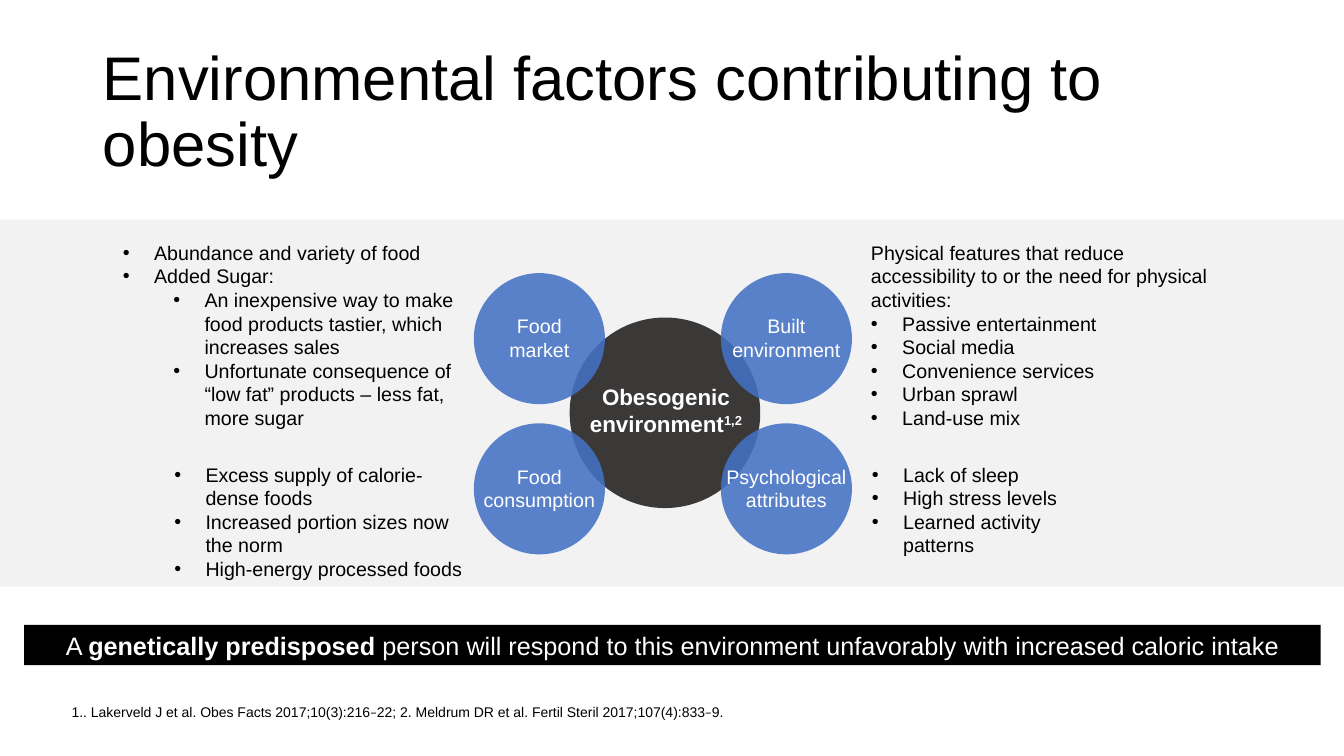
from lxml.etree import SubElement
from pptx import Presentation
from pptx.dml.color import RGBColor
from pptx.enum.shapes import MSO_SHAPE
from pptx.enum.text import MSO_ANCHOR, MSO_AUTO_SIZE, PP_ALIGN
from pptx.oxml.ns import qn
from pptx.util import Inches, Pt

BLACK = RGBColor(0x00, 0x00, 0x00)
WHITE = RGBColor(0xFF, 0xFF, 0xFF)
PALE_GREY = RGBColor(0xF2, 0xF2, 0xF2)
CHARCOAL = RGBColor(0x3B, 0x38, 0x38)
BLUE = RGBColor(0x44, 0x72, 0xC4)

CIRCLE_SIZE = 1.3
HANGING = 0.31
LEVEL_STEP = 0.5

# Label, circle left, circle top, label width
FACTORS = [
    ("Built environment", 7.15, 2.71, 1.3),
    ("Psychological attributes", 7.15, 4.2, 1.5),
    ("Food consumption", 4.7, 4.2, 1.5),
    ("Food market", 4.7, 2.71, 1.2),
]

# Box, then (text, bullet level); level None means no bullet
DETAILS = [
    ((8.54, 2.34, 3.68, 2.22), [
        ("Physical features that reduce accessibility to or the need "
         "for physical activities:", None),
        ("Passive entertainment", 0),
        ("Social media", 0),
        ("Convenience services", 0),
        ("Urban sprawl", 0),
        ("Land-use mix", 0),
    ]),
    ((1.63, 4.54, 3.09, 1.28), [
        ("Excess supply of calorie-dense foods", 0),
        ("Increased portion sizes now the norm", 0),
        ("High-energy processed foods", 0),
    ]),
    ((8.55, 4.54, 2.63, 0.81), [
        ("Lack of sleep", 0),
        ("High stress levels", 0),
        ("Learned activity patterns", 0),
    ]),
    ((1.12, 2.34, 3.49, 1.99), [
        ("Abundance and variety of food", 0),
        ("Added Sugar:", 0),
        ("An inexpensive way to make food products tastier, "
         "which increases sales", 1),
        ("Unfortunate consequence of “low fat” products – less fat, "
         "more sugar", 1),
    ]),
]


def style(paragraph, size, color, align=PP_ALIGN.LEFT):
    paragraph.alignment = align
    paragraph.font.name = "Arial"
    paragraph.font.size = Pt(size)
    paragraph.font.color.rgb = color


def add_panel(slide, kind, box, color, opacity=None):
    panel = slide.shapes.add_shape(kind, *map(Inches, box))
    panel.shadow.inherit = False
    panel.fill.solid()
    panel.fill.fore_color.rgb = color
    panel.line.fill.background()
    if opacity:
        tint = panel.fill._xPr.find(qn("a:solidFill"))[0]
        SubElement(tint, qn("a:alpha"), val=str(opacity * 1000))
    return panel


def add_text(slide, box):
    frame = slide.shapes.add_textbox(*map(Inches, box)).text_frame
    frame.word_wrap = True
    return frame


def add_bullet(paragraph, level):
    paragraph.level = level
    properties = paragraph._p.get_or_add_pPr()
    properties.set("marL", str(Inches(HANGING + LEVEL_STEP * level)))
    properties.set("indent", str(Inches(-HANGING)))
    SubElement(properties, qn("a:buFont"), typeface="Arial")
    SubElement(properties, qn("a:buChar"), char="•")


def add_title(slide, text):
    title = slide.shapes.title
    title.left, title.top = Inches(0.92), Inches(0.4)
    title.width, title.height = Inches(11.5), Inches(1.45)
    frame = title.text_frame
    frame.text = text
    frame.word_wrap = True
    frame.auto_size = MSO_AUTO_SIZE.NONE
    frame.vertical_anchor = MSO_ANCHOR.MIDDLE
    style(frame.paragraphs[0], 44, BLACK)
    frame.paragraphs[0].line_spacing = 0.9


def add_references(slide):
    frame = add_text(slide, (0.71, 6.8, 11.8, 0.35))
    frame.margin_left = frame.margin_right = 0
    frame.margin_top = frame.margin_bottom = 0
    frame.vertical_anchor = MSO_ANCHOR.BOTTOM
    references = frame.paragraphs[0]
    style(references, 10, BLACK)
    references.line_spacing = 0.9
    pieces = ["1.. Lakerveld J et al. Obes Facts 2017;10(3):216", "–",
              "22; 2. Meldrum DR et al. Fertil Steril 2017;107(4):833", "–",
              "9."]
    for piece in pieces:
        run = references.add_run()
        run.text = piece
        run.font.name = "Calibri" if piece == "–" else "Arial"


def add_core(slide):
    add_panel(slide, MSO_SHAPE.OVAL, (5.65, 3.15, 1.89, 1.89), CHARCOAL)
    core = add_text(slide, (5.4, 3.75, 2.41, 0.64)).paragraphs[0]
    style(core, 16, WHITE, PP_ALIGN.CENTER)
    core.font.bold = True
    core.add_run().text = "Obesogenic environment"
    citation = core.add_run()
    citation.text = "1,2"
    citation.font._element.set("baseline", "30000")


def add_factor(slide, label, left, top, label_width):
    add_panel(slide, MSO_SHAPE.OVAL, (left, top, CIRCLE_SIZE, CIRCLE_SIZE),
              BLUE, opacity=88)
    label_left = left + (CIRCLE_SIZE - label_width) / 2
    frame = add_text(slide, (label_left, top + 0.36, label_width, 0.57))
    frame.text = label
    style(frame.paragraphs[0], 14, WHITE, PP_ALIGN.CENTER)


def add_details(slide, box, entries):
    frame = add_text(slide, box)
    for index, (text, level) in enumerate(entries):
        detail = frame.add_paragraph() if index else frame.paragraphs[0]
        detail.text = text
        style(detail, 14, BLACK)
        if level is not None:
            add_bullet(detail, level)


def add_conclusion(slide):
    banner = add_panel(slide, MSO_SHAPE.RECTANGLE, (0.24, 6.2, 12.86, 0.4), BLACK)
    frame = banner.text_frame
    frame.word_wrap = True
    frame.vertical_anchor = MSO_ANCHOR.MIDDLE
    conclusion = frame.paragraphs[0]
    style(conclusion, 18, WHITE, PP_ALIGN.CENTER)
    for text, bold in [
        ("A ", False),
        ("genetically predisposed ", True),
        ("person will respond to this environment unfavorably "
         "with increased caloric intake", False),
    ]:
        run = conclusion.add_run()
        run.text = text
        run.font.bold = bold


def main():
    deck = Presentation()
    deck.slide_width, deck.slide_height = Inches(13.33), Inches(7.5)
    slide = deck.slides.add_slide(deck.slide_layouts[5])

    # Title, background band and references
    add_title(slide, "Environmental factors contributing to obesity")
    add_panel(slide, MSO_SHAPE.RECTANGLE, (0, 2.18, 13.33, 3.64), PALE_GREY)
    add_references(slide)

    # Central environment with its four factors
    add_core(slide)
    for factor in FACTORS:
        add_factor(slide, *factor)
    for box, entries in DETAILS:
        add_details(slide, box, entries)

    # Closing statement
    add_conclusion(slide)
    deck.save("out.pptx")


if __name__ == "__main__":
    main()
